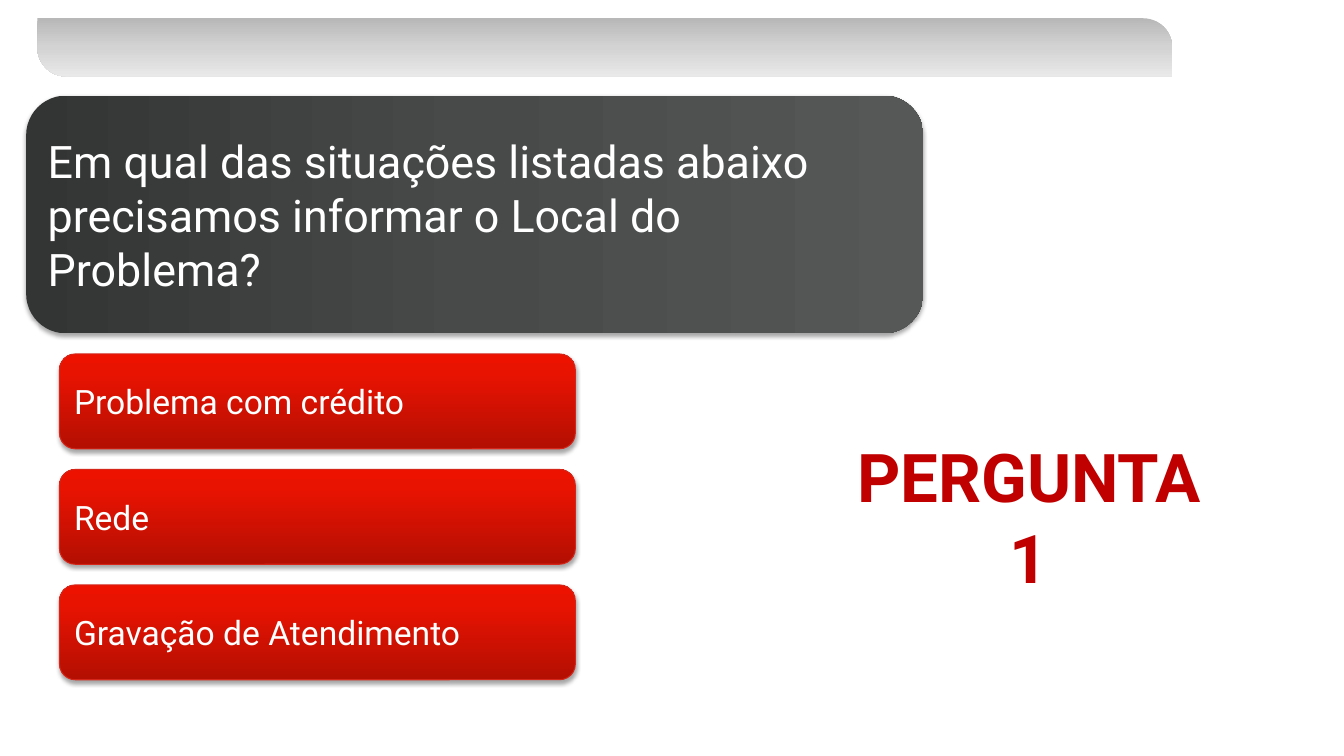
"""Builds a quiz slide: one question, three answers and a question number."""
from lxml import etree
from pptx import Presentation
from pptx.dml.color import RGBColor
from pptx.enum.shapes import MSO_SHAPE
from pptx.enum.text import MSO_ANCHOR, MSO_AUTO_SIZE, PP_ALIGN
from pptx.oxml import parse_xml
from pptx.oxml.ns import nsdecls, qn
from pptx.util import Cm, Pt

ROUND, DIAG = MSO_SHAPE.ROUNDED_RECTANGLE, MSO_SHAPE.ROUND_2_DIAG_RECTANGLE
MIDDLE, FIT = MSO_ANCHOR.MIDDLE, MSO_AUTO_SIZE.SHAPE_TO_FIT_TEXT
LEFT, CENTER = PP_ALIGN.LEFT, PP_ALIGN.CENTER

QUERY = "Em qual das situações listadas abaixo precisamos informar o Local do Problema?"
ANSWERS = ["Problema com crédito", "Rede", "Gravação de Atendimento"]
LABEL = "PERGUNTA\n1"

FONT = "Roboto"
COLORS = {"white": "FFFFFF", "edge": "D52619", "label": "C00000", "shade": "000000"}
BLENDS = {
    "bar": (270, [(0, "B8B8B8"), (50, "D3D3D3"), (100, "E9E9E9")]),
    "query": (0, [(0, "333434"), (50, "484A4A"), (100, "565858")]),
    "answer": (90, [(0, "B30F02"), (80, "E91302"), (100, "ED1100")]),
}

BAR_BOX = (0.94, 0.46, 28.6, 1.47)
QUERY_BOX = (0.66, 2.41, 22.61, 5.99)
LABEL_BOX = (21.21, 10.85, 9.45, 4.37)
ANSWER_LEFT, ANSWER_TOP, ANSWER_WIDTH, ANSWER_HEIGHT = 1.5, 8.92, 13, 2.39
ANSWER_STEP = 2.91


def write(frame, text, size, color, align=LEFT, bold=False):
    frame.text = text
    for para in frame.paragraphs:
        para.alignment = align
        for run in para.runs:
            run.font.name = FONT
            run.font.size = Pt(size)
            run.font.bold = bold
            run.font.color.rgb = RGBColor.from_string(COLORS[color])


def add_panel(slide, kind, box, blend):
    panel = slide.shapes.add_shape(kind, *map(Cm, box))
    panel.shadow.inherit = False
    panel.line.fill.background()
    angle, stops = BLENDS[blend]
    panel.fill.gradient()
    panel.fill.gradient_angle = angle
    stop_list = panel._element.spPr.find(".//" + qn("a:gsLst"))
    for old in list(stop_list):
        stop_list.remove(old)
    for place, color in stops:
        stop = etree.SubElement(stop_list, qn("a:gs"), pos=str(place * 1000))
        etree.SubElement(stop, qn("a:srgbClr"), val=color)
    return panel


def add_card(slide, box, blend, text, size):
    card = add_panel(slide, ROUND, box, blend)
    card._element.spPr.find(qn("a:effectLst")).append(parse_xml(
        f'<a:outerShdw {nsdecls("a")} blurRad="{Pt(3.1)}" dist="{Pt(1.8)}" '
        f'dir="5400000" rotWithShape="0"><a:srgbClr val="{COLORS["shade"]}">'
        '<a:alpha val="35000"/></a:srgbClr></a:outerShdw>'))
    frame = card.text_frame
    frame.word_wrap = True
    frame.vertical_anchor = MIDDLE
    write(frame, text, size, "white")
    return card


def main():
    deck = Presentation()
    deck.slide_width, deck.slide_height = Cm(33.87), Cm(19.05)
    slide = deck.slides.add_slide(deck.slide_layouts[6])

    bar = add_panel(slide, DIAG, BAR_BOX, "bar")
    bar.adjustments[0], bar.adjustments[1] = 0, 0.5
    add_card(slide, QUERY_BOX, "query", QUERY, 32)

    for row, answer in enumerate(ANSWERS):
        top = ANSWER_TOP + row * ANSWER_STEP
        box = (ANSWER_LEFT, top, ANSWER_WIDTH, ANSWER_HEIGHT)
        card = add_card(slide, box, "answer", answer, 24)
        card.line.color.rgb = RGBColor.from_string(COLORS["edge"])
        card.line.width = Pt(0.75)

    frame = slide.shapes.add_textbox(*map(Cm, LABEL_BOX)).text_frame
    frame.word_wrap = False
    frame.auto_size = FIT
    write(frame, LABEL, 48, "label", CENTER, True)

    deck.save("out.pptx")


if __name__ == "__main__":
    main()
